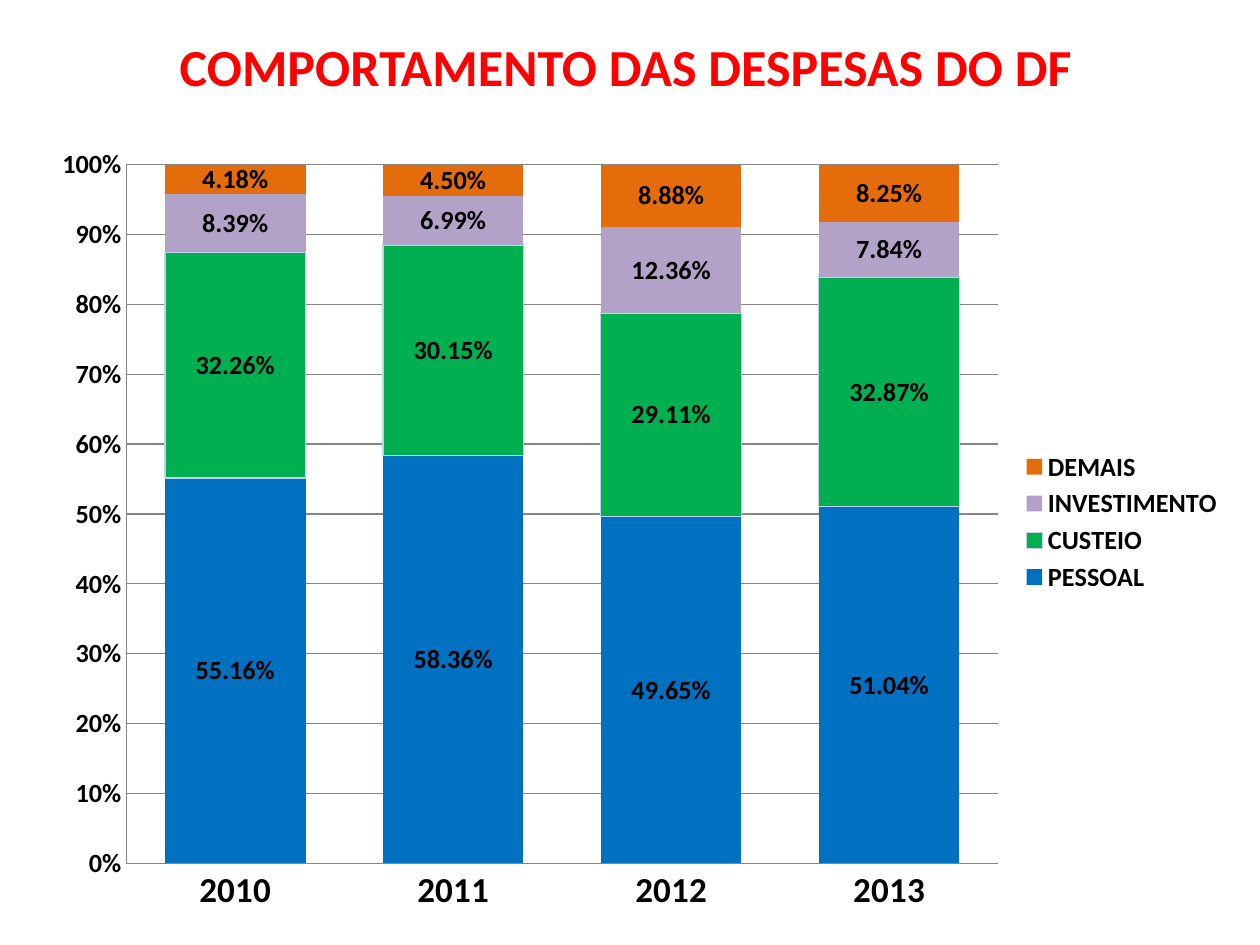
from lxml import etree
from pptx import Presentation
from pptx import util as u
from pptx.chart.data import CategoryChartData
from pptx.dml.color import RGBColor
from pptx.enum import chart as charts, text

PX = 914400 // 126  # EMU in one px
COLORS = {
    "title": "FF0000", "text": "000000", "grid": "868686", "edge": "C2D1ED",
    "PESSOAL": "0070C0", "CUSTEIO": "00B050",
    "INVESTIMENTO": "B3A2C7", "DEMAIS": "E46C0A",
}
YEARS = ["2010", "2011", "2012", "2013"]
EXPENSES = {
    "PESSOAL": [0.5516, 0.5836, 0.4965, 0.5104],
    "CUSTEIO": [0.3226, 0.3015, 0.2911, 0.3287],
    "INVESTIMENTO": [0.0839, 0.0699, 0.1236, 0.0784],
    "DEMAIS": [0.0418, 0.0450, 0.0888, 0.0825],
}
PLOT = {"x": 0.076, "y": 0.05, "w": 0.726, "h": 0.88}


class Painter:
    """Holds the style and the current slide."""
    font = "Calibri"

    def __init__(self, page):
        self.page = page

    def place(self, *lengths):
        return [u.Emu(length * PX) for length in lengths]

    def color(self, name):
        return RGBColor.from_string(COLORS[name])

    def style(self, font, size, color="text"):
        font.name, font.size, font.bold = self.font, u.Pt(size), True
        font.color.rgb = self.color(color)

    def heading(self, words, left, top, width, height, size):
        box = self.page.shapes.add_textbox(*self.place(left, top, width, height))
        frame = box.text_frame
        frame.word_wrap = True
        frame.vertical_anchor = text.MSO_ANCHOR.MIDDLE
        para = frame.paragraphs[0]
        para.alignment = text.PP_ALIGN.CENTER
        span = para.add_run()
        span.text = words
        self.style(span.font, size, "title")

    def axis(self, axis, size):
        axis.major_tick_mark = axis.minor_tick_mark = charts.XL_TICK_MARK.NONE
        self.style(axis.tick_labels.font, size)
        self.line(axis.format.line, "grid")

    def line(self, line, color):
        line.color.rgb = self.color(color)
        line.width = u.Pt(0.75)

    def fix_plot_area(self, chart, fractions):
        area = chart.plots[0]._element.getparent()
        space = etree.QName(area).namespace
        for old in area.findall(f"{{{space}}}layout"):
            area.remove(old)
        layout = etree.Element(f"{{{space}}}layout")
        manual = etree.SubElement(layout, f"{{{space}}}manualLayout")
        settings = {"layoutTarget": "inner", "xMode": "edge", "yMode": "edge", **fractions}
        for tag, value in settings.items():
            etree.SubElement(manual, f"{{{space}}}{tag}").set("val", str(value))
        area.insert(0, layout)

    def stacked_chart(self, categories, series, left, top, width, height):
        data = CategoryChartData(number_format="0.00%")
        data.categories = categories
        for name, values in series.items():
            data.add_series(name, values)
        chart = self.page.shapes.add_chart(
            charts.XL_CHART_TYPE.COLUMN_STACKED_100,
            *self.place(left, top, width, height), data).chart
        chart.has_title = False
        self.style(chart.font, 15)

        # Axes and gridlines
        self.axis(chart.category_axis, 20)
        values = chart.value_axis
        self.axis(values, 15)
        values.minimum_scale, values.maximum_scale, values.major_unit = 0, 1, 0.1
        values.tick_labels.number_format = "0%"
        values.tick_labels.number_format_is_linked = False
        values.has_major_gridlines = True
        self.line(values.major_gridlines.format.line, "grid")

        # Columns and their labels
        plot = chart.plots[0]
        plot.gap_width, plot.overlap, plot.vary_by_categories = 55, 100, False
        for column in plot.series:
            column.format.fill.solid()
            column.format.fill.fore_color.rgb = self.color(column.name)
            if column.name == "CUSTEIO":
                self.line(column.format.line, "edge")
            labels = column.data_labels
            labels.show_value = True
            labels.number_format, labels.number_format_is_linked = "0.00%", False
            labels.position = charts.XL_LABEL_POSITION.CENTER
            self.style(labels.font, 15)

        # Legend
        chart.has_legend = True
        chart.legend.position = charts.XL_LEGEND_POSITION.RIGHT
        chart.legend.include_in_layout = False
        self.style(chart.legend.font, 15)
        self.fix_plot_area(chart, PLOT)


def main():
    deck = Presentation()
    deck.slide_width, deck.slide_height = u.Inches(10), u.Inches(7.5)
    painter = Painter(deck.slides.add_slide(deck.slide_layouts[6]))
    painter.stacked_chart(YEARS, EXPENSES, 35, 125, 1201, 794)
    painter.heading("COMPORTAMENTO DAS DESPESAS DO DF", 59, 21, 1134, 90, 29.7)
    deck.save("out.pptx")


if __name__ == "__main__":
    main()
